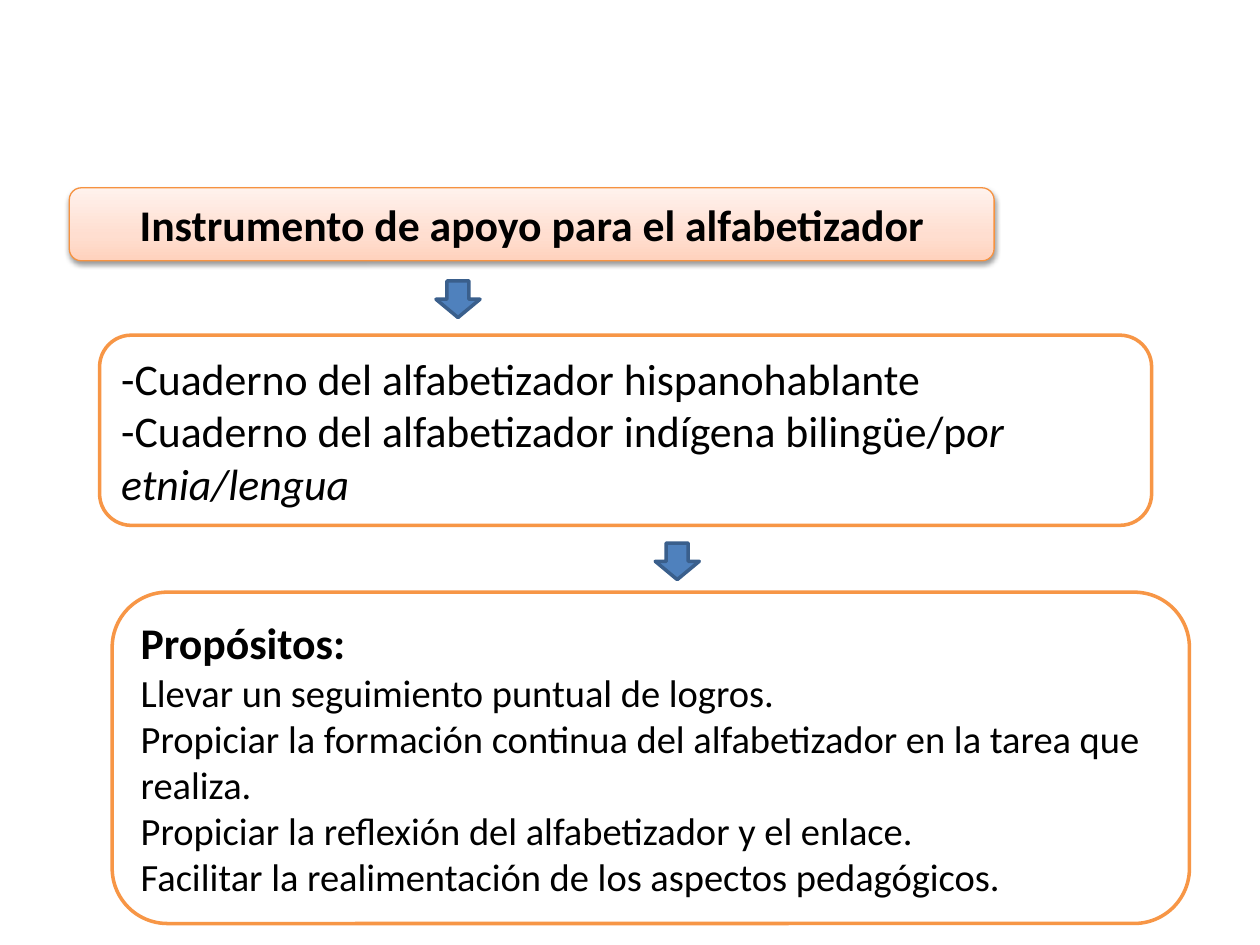
from copy import deepcopy

from pptx import Presentation
from pptx.dml.color import RGBColor
from pptx.enum.shapes import MSO_SHAPE as Shape
from pptx.enum.text import MSO_ANCHOR as Anchor, MSO_AUTO_SIZE as AutoSize, PP_ALIGN as Align
from pptx.oxml import parse_xml
from pptx.oxml.ns import nsdecls, qn
from pptx.util import Inches, Pt

COLORS = {
    "text": "000000",
    "panel": "FFFFFF",
    "panel_line": "F79646",
    "heading_line": "F69240",
    "arrow": "4F81BD",
    "arrow_line": "3A5F8C",
    "shadow": "000000",
}
HEADING_STOPS = [(0, "FFD2BD"), (0.35, "FFDED0"), (1, "FFF2ED")]
LARGE = {"size": Pt(25)}
LARGE_BOLD = {"size": Pt(25), "bold": True}
LARGE_ITALIC = {"size": Pt(25), "italic": True}
MEDIUM = {"size": Pt(22)}

# Each paragraph is a list of (text, font format) runs.
HEADING = [[("Instrumento de apoyo para el alfabetizador", LARGE_BOLD)]]
NOTEBOOKS = [
    [("-Cuaderno del alfabetizador hispanohablante", LARGE)],
    [("-Cuaderno del alfabetizador indígena bilingüe/p", LARGE), ("or etnia/lengua", LARGE_ITALIC)],
]
PURPOSES = [[("Propósitos:", LARGE_BOLD)]] + [
    [(text, MEDIUM)]
    for text in (
        "Llevar un seguimiento puntual de logros.",
        "Propiciar la formación continua del alfabetizador en la tarea que realiza.",
        "Propiciar la reflexión del alfabetizador y el enlace.",
        "Facilitar la realimentación de los aspectos pedagógicos.",
    )
]


def rgb(name):
    return RGBColor.from_string(COLORS[name])


def add_outlined(slide, kind, box, fill, line, width):
    shape = slide.shapes.add_shape(kind, *map(Inches, box))
    shape.shadow.inherit = False
    shape.fill.solid()
    shape.fill.fore_color.rgb = rgb(fill)
    shape.line.color.rgb = rgb(line)
    shape.line.width = Pt(width)
    return shape


def write_text(shape, paragraphs, alignment):
    frame = shape.text_frame
    frame.word_wrap = True
    frame.auto_size = AutoSize.SHAPE_TO_FIT_TEXT
    frame.vertical_anchor = Anchor.MIDDLE
    for index, runs in enumerate(paragraphs):
        paragraph = frame.add_paragraph() if index else frame.paragraphs[0]
        paragraph.alignment = alignment
        for text, font_format in runs:
            run = paragraph.add_run()
            run.text = text
            run.font.name = "Calibri"
            run.font.color.rgb = rgb("text")
            for name, value in font_format.items():
                setattr(run.font, name, value)


def add_panel(slide, box, paragraphs, line="panel_line", width=2, alignment=Align.LEFT):
    panel = add_outlined(slide, Shape.FLOWCHART_ALTERNATE_PROCESS, box, "panel", line, width)
    write_text(panel, paragraphs, alignment)
    return panel


def add_heading(slide, box):
    """Add the centred heading panel with its gradient and soft shadow."""
    heading = add_panel(slide, box, HEADING, "heading_line", 0.75, Align.CENTER)
    heading.fill.gradient()
    heading.fill.gradient_angle = 90
    properties = heading._element.spPr
    stop_list = properties.find(".//" + qn("a:gsLst"))
    stop_list.append(deepcopy(stop_list[0]))
    for stop, (position, color) in zip(heading.fill.gradient_stops, HEADING_STOPS):
        stop.position = position
        stop.color.rgb = RGBColor.from_string(color)
    properties.find(qn("a:effectLst")).append(parse_xml(
        f'<a:outerShdw {nsdecls("a")} blurRad="{Pt(3.1)}" dist="{Pt(1.6)}" '
        f'dir="5400000" rotWithShape="0"><a:srgbClr val="{COLORS["shadow"]}">'
        '<a:alpha val="38000"/></a:srgbClr></a:outerShdw>'))


def add_arrow(slide, left, top):
    add_outlined(slide, Shape.DOWN_ARROW, (left, top, 0.35, 0.29), "arrow", "arrow_line", 2)


def main():
    presentation = Presentation()
    presentation.slide_width, presentation.slide_height = Inches(10), Inches(7.5)
    slide = presentation.slides.add_slide(presentation.slide_layouts[6])
    add_heading(slide, (0.55, 1.49, 7.34, 0.58))
    add_panel(slide, (0.79, 2.66, 8.35, 1.51), NOTEBOOKS)
    add_arrow(slide, 3.46, 2.23)
    add_arrow(slide, 5.2, 4.31)
    add_panel(slide, (0.89, 4.7, 8.55, 2.63), PURPOSES)
    presentation.save("out.pptx")


if __name__ == "__main__":
    main()
